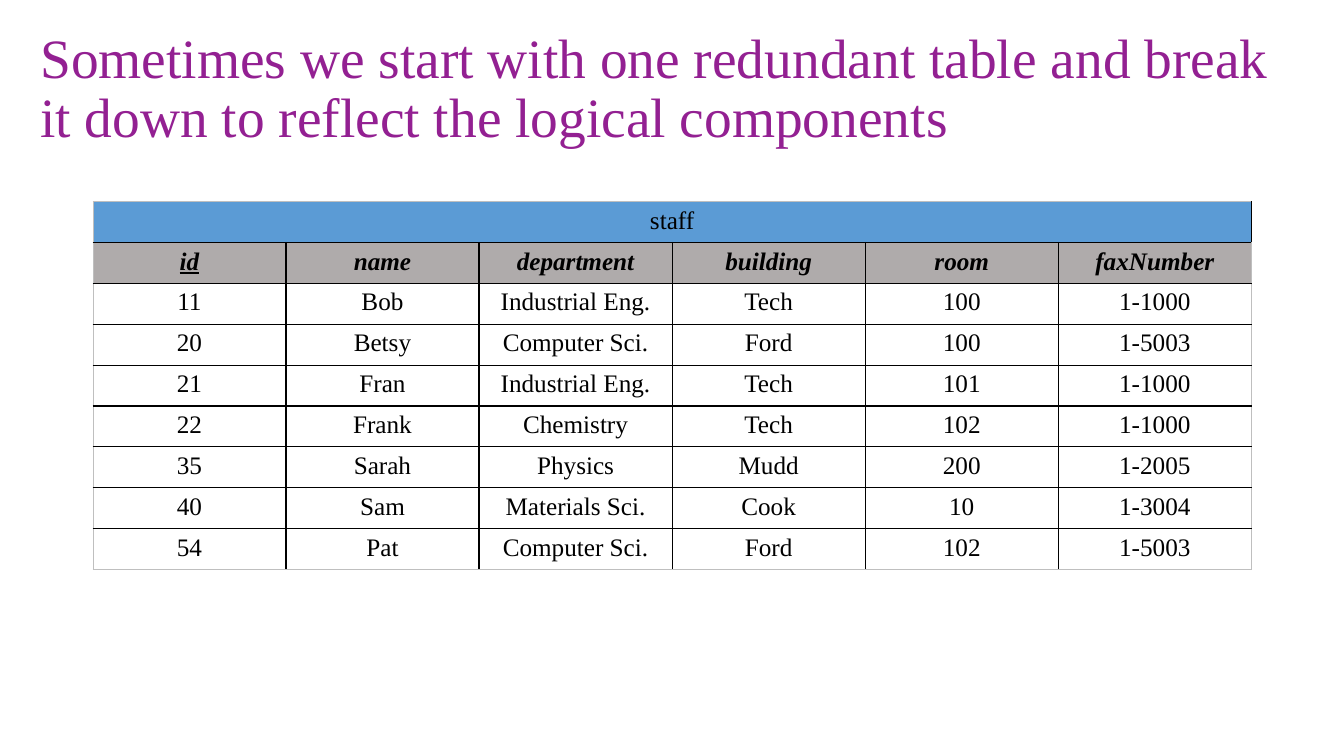
from pptx import Presentation
from pptx.dml.color import RGBColor
from pptx.enum.text import MSO_ANCHOR, MSO_AUTO_SIZE, PP_ALIGN as Align
from pptx.oxml.ns import qn
from pptx.util import Cm, Pt
from lxml.etree import SubElement

FONT = "Times New Roman"
PURPLE = RGBColor(0x93, 0x20, 0x92)
BLUE = RGBColor(0x5B, 0x9B, 0xD5)
GRAY = RGBColor(0xAF, 0xAB, 0xAB)
BLACK = RGBColor(0x00, 0x00, 0x00)
EDGE = RGBColor(0xBF, 0xBF, 0xBF)

TITLE = ("Sometimes we start with one redundant table and break "
         "it down to reflect the logical components")
FIELDS = ["id", "name", "department", "building", "room", "faxNumber"]
STAFF = [
    ["11", "Bob", "Industrial Eng.", "Tech", "100", "1-1000"],
    ["20", "Betsy", "Computer Sci.", "Ford", "100", "1-5003"],
    ["21", "Fran", "Industrial Eng.", "Tech", "101", "1-1000"],
    ["22", "Frank", "Chemistry", "Tech", "102", "1-1000"],
    ["35", "Sarah", "Physics", "Mudd", "200", "1-2005"],
    ["40", "Sam", "Materials Sci.", "Cook", "10", "1-3004"],
    ["54", "Pat", "Computer Sci.", "Ford", "102", "1-5003"],
]


def add_run(paragraph, text, size, color):
    run = paragraph.add_run()
    run.text = text
    run.font.name = FONT
    run.font.size = Pt(size)
    run.font.color.rgb = color
    return run


def set_title(slide, text):
    title = slide.shapes.title
    title.left, title.top = Cm(0.76), Cm(1.04)
    title.width, title.height = Cm(32.33), Cm(2.46)
    frame = title.text_frame
    frame.auto_size = MSO_AUTO_SIZE.NONE
    frame.word_wrap = True
    frame.vertical_anchor = MSO_ANCHOR.MIDDLE
    paragraph = frame.paragraphs[0]
    paragraph.alignment = Align.LEFT
    paragraph.line_spacing = 0.9
    add_run(paragraph, text, 39.6, PURPLE)


def set_borders(cell, outer_sides):
    """Black rules inside the table, thin gray ones on its outer sides."""
    properties = cell._tc.get_or_add_tcPr()
    for side in ("lnL", "lnR", "lnT", "lnB"):
        outer = side in outer_sides
        line = SubElement(properties, qn(f"a:{side}"), w=str(Pt(0.5 if outer else 1)))
        fill = SubElement(line, qn("a:solidFill"))
        SubElement(fill, qn("a:srgbClr"), val=str(EDGE if outer else BLACK))


def fill_cell(cell, color):
    if color is None:
        cell.fill.background()
    else:
        cell.fill.solid()
        cell.fill.fore_color.rgb = color


def write_cell(cell, text):
    paragraph = cell.text_frame.paragraphs[0]
    paragraph.alignment = Align.CENTER
    return add_run(paragraph, text, 18, BLACK)


def add_relation(slide, name, fields, records):
    rows, columns = len(records) + 2, len(fields)
    table = slide.shapes.add_table(rows, columns, Cm(2.34), Cm(5.08),
                                   Cm(29.2), Cm(9.27)).table
    table.first_row = table.horz_banding = False

    # Borders and fills
    for r in range(rows):
        for c in range(columns):
            cell = table.cell(r, c)
            edges = {"lnL": c == 0, "lnR": c == columns - 1,
                     "lnT": r == 0, "lnB": r == rows - 1}
            set_borders(cell, [side for side, outer in edges.items() if outer])
            fill_cell(cell, {0: BLUE, 1: GRAY}.get(r))

    # Relation name across all columns
    table.cell(0, 0).merge(table.cell(0, columns - 1))
    write_cell(table.cell(0, 0), name)

    # Field names, with the key underlined
    for c, field in enumerate(fields):
        font = write_cell(table.cell(1, c), field).font
        font.bold = font.italic = True
        font.underline = c == 0

    # Records
    for r, record in enumerate(records, start=2):
        for c, value in enumerate(record):
            write_cell(table.cell(r, c), value)


def main():
    deck = Presentation()
    deck.slide_width, deck.slide_height = Cm(33.87), Cm(19.05)
    slide = deck.slides.add_slide(deck.slide_layouts.get_by_name("Title Only"))
    set_title(slide, TITLE)
    add_relation(slide, "staff", FIELDS, STAFF)
    deck.save("out.pptx")


if __name__ == "__main__":
    main()
